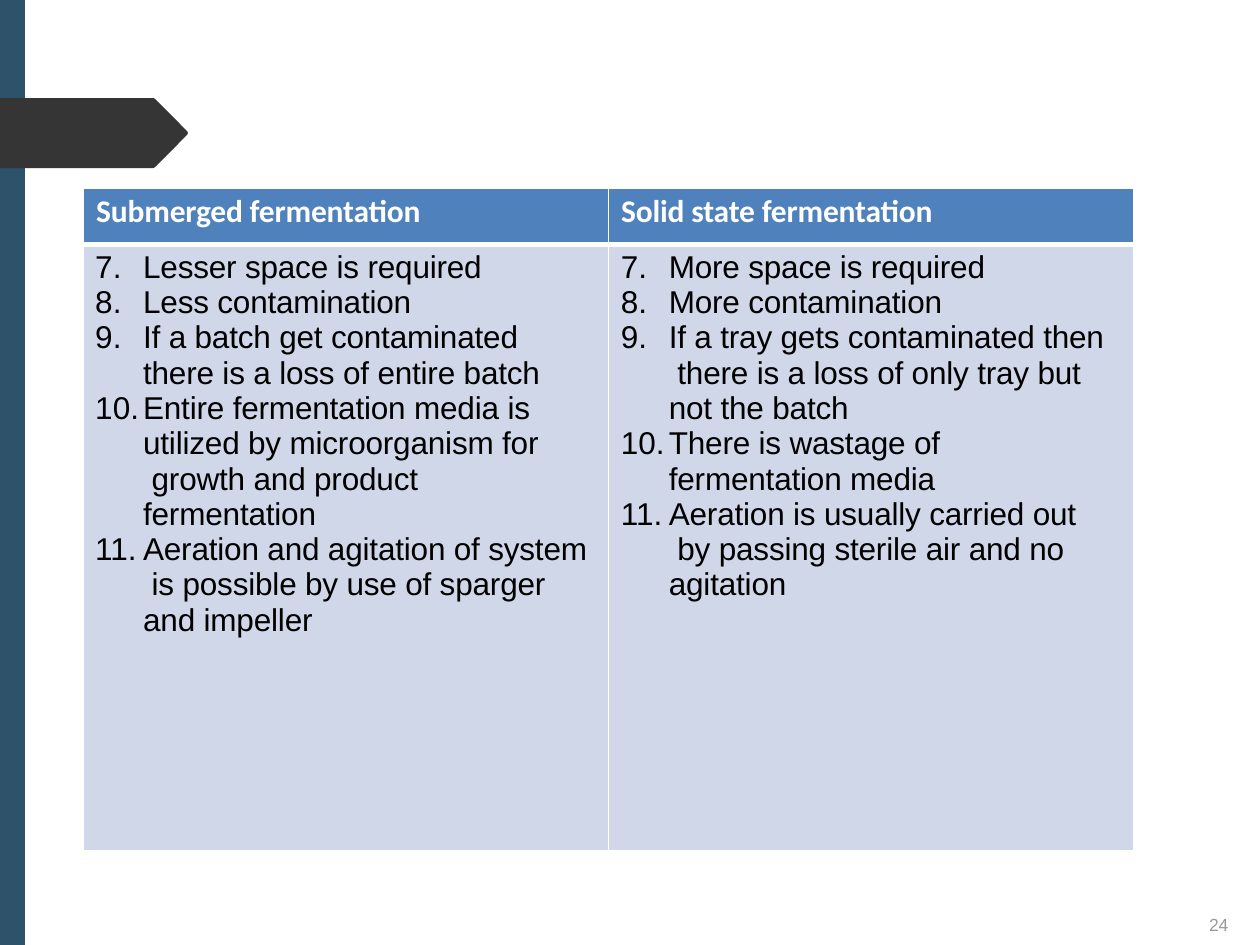
from dataclasses import dataclass

from lxml import etree
from pptx import Presentation
from pptx.dml.color import RGBColor
from pptx.oxml.ns import qn
from pptx.util import Pt

WHITE = RGBColor(0xFF, 0xFF, 0xFF)
BLACK = RGBColor(0x00, 0x00, 0x00)
GRAY = RGBColor(0x9B, 0x9A, 0x97)
TEAL = RGBColor(0x2D, 0x52, 0x69)
DARK = RGBColor(0x35, 0x35, 0x35)
BLUE = RGBColor(0x4F, 0x81, 0xBC)
PALE = RGBColor(0xD0, 0xD7, 0xE8)

THIN, THICK = 1, 3
HANG = 27.36


@dataclass
class Item:
    text: str
    start: int = 7  # first number of its list, 0 for no number


@dataclass
class Column:
    title: str
    left: float
    items: list[Item]


@dataclass
class Outline:
    color: RGBColor
    points: list[tuple[float, float]]


SHAPES = [
    Outline(TEAL, [(0, 0), (14.4, 0), (14.4, 540), (0, 540)]),
    Outline(DARK, [(0, 56), (87.8, 56), (88.9, 56.8), (107, 75),
                   (107.4, 76), (107, 77), (88.9, 95.2), (87.8, 96),
                   (0, 96)]),
]

COLUMNS = [
    Column("Submerged fermentation", 34, [
        Item("Lesser space is required"),
        Item("Less contamination"),
        Item("If a batch get contaminated\nthere is a loss of entire batch"),
        Item("Entire fermentation media is\nutilized by microorganism for\n"
             " growth and product\nfermentation"),
        Item("Aeration and agitation of system\n is possible by use of "
             "sparger\nand impeller"),
    ]),
    Column("Solid state fermentation", 34.4, [
        Item("More space is required"),
        Item("More contamination"),
        Item("If a tray gets contaminated then\n there is a loss of only "
             "tray but\nnot the batch"),
        Item("There is wastage of"),
        Item("fermentation media", 0),
        Item("Aeration is usually carried out\n by passing sterile air and "
             "no\nagitation", 11),
    ]),
]


def style(para, name: str, size: float, color: RGBColor, bold=False):
    for run in para.runs:
        font = run.font
        font.name, font.size, font.bold = name, Pt(size), bold
        font.color.rgb = color
        run._r.get_or_add_rPr().set("spc", "-10")


def draw(slide, part: Outline):
    dots = [(Pt(x), Pt(y)) for x, y in part.points]
    pen = slide.shapes.build_freeform(*dots[0], scale=1.0)
    pen.add_line_segments(dots[1:], close=True)
    shape = pen.convert_to_shape()
    shape.shadow.inherit = False
    shape.fill.solid()
    shape.fill.fore_color.rgb = part.color
    shape.line.fill.background()


def paint(cell, color: RGBColor, pad: float, top: float, base: float):
    """Set the margins, white borders and fill of a cell."""
    cell.margin_left = cell.margin_right = cell.margin_bottom = 0
    cell.margin_top = Pt(pad)
    props = cell._tc.get_or_add_tcPr()
    sides = {"lnL": THIN, "lnR": THIN, "lnT": top, "lnB": base}
    for tag, width in sides.items():
        line = etree.SubElement(props, qn("a:" + tag), w=str(Pt(width)))
        fill = etree.SubElement(line, qn("a:solidFill"))
        etree.SubElement(fill, qn("a:srgbClr"), val=str(WHITE))
    cell.fill.solid()
    cell.fill.fore_color.rgb = color


def indent(para, left: float, hang: float = 0):
    props = para._p.get_or_add_pPr()
    props.set("marL", str(Pt(left)))
    props.set("indent", str(Pt(-hang)))
    return props


def fill_list(cell, col: Column):
    frame = cell.text_frame
    for i, item in enumerate(col.items):
        para = frame.add_paragraph() if i else frame.paragraphs[0]
        para.text = item.text
        props = indent(para, col.left, HANG if item.start else 0)
        if item.start:
            etree.SubElement(props, qn("a:buAutoNum"), type="arabicPeriod",
                             startAt=str(item.start))
        style(para, "Arial", 18, BLACK)


def add_grid(slide):
    frame = slide.shapes.add_table(2, len(COLUMNS), Pt(47.8), Pt(107.5),
                                   Pt(600), Pt(378.5))
    table = frame.table
    table.first_row = table.horz_banding = False
    table.rows[0].height, table.rows[1].height = Pt(32.2), Pt(346.3)
    for i, col in enumerate(COLUMNS):
        table.columns[i].width = Pt(300)
        head, body = table.cell(0, i), table.cell(1, i)
        paint(head, BLUE, 2.4, THIN, THICK)
        head.text_frame.text = col.title
        para = head.text_frame.paragraphs[0]
        indent(para, 7.2)
        style(para, "Calibri", 18, WHITE, True)
        paint(body, PALE, 3.1, THICK, THIN)
        fill_list(body, col)


def add_page(slide, text: str):
    box = slide.shapes.add_textbox(Pt(689), Pt(522), Pt(15.2), Pt(13))
    frame = box.text_frame
    frame.word_wrap = True
    frame.margin_left = Pt(2)
    frame.margin_right = frame.margin_top = frame.margin_bottom = 0
    frame.text = text
    style(frame.paragraphs[0], "Arial", 10, GRAY)


def main():
    deck = Presentation()
    deck.slide_width, deck.slide_height = Pt(720), Pt(540)
    slide = deck.slides.add_slide(deck.slide_layouts[6])
    # Side band and arrow
    for part in SHAPES:
        draw(slide, part)
    # Comparison table
    add_grid(slide)
    # Page number
    add_page(slide, "24")
    deck.save("out.pptx")


if __name__ == "__main__":
    main()
